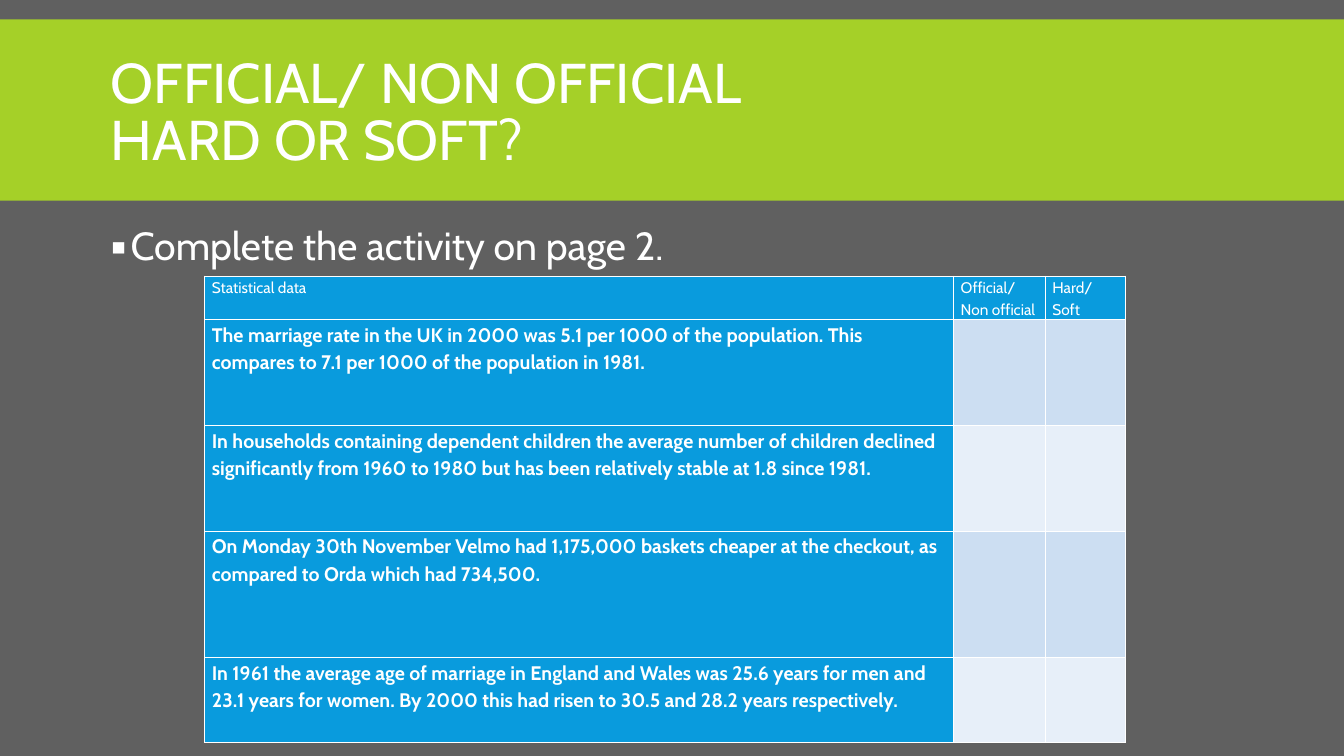
from lxml.etree import SubElement as Sub
from pptx import Presentation
from pptx.dml.color import RGBColor as Rgb
from pptx.enum.shapes import MSO_SHAPE as Shape
from pptx.enum.text import MSO_ANCHOR as Anchor, MSO_AUTO_SIZE as Auto, PP_ALIGN as Align
from pptx.oxml.ns import qn
from pptx.util import Cm, Pt

HUES = {"back": "606060", "band": "A5D028", "text": "FFFFFF", "blue": "099BDD",
        "odd": "CCDEF2", "even": "E7EFF9"}
FACE = "Cabin"
HEADS = ["Statistical data", "Official/ Non official", "Hard/Soft"]
FACTS = [
    "The marriage rate in the UK in 2000 was 5.1 per 1000 of the population. This compares to 7.1 per 1000 of the population in 1981.",
    "In households containing dependent children the average number of children declined significantly from 1960 to 1980 but has been relatively stable at 1.8 since 1981.",
    "On Monday 30th November Velmo had 1,175,000 baskets cheaper at the checkout, as compared to Orda which had 734,500.",
    "In 1961 the average age of marriage in England and Wales was 25.6 years for men and 23.1 years for women. By 2000 this had risen to 30.5 and 28.2 years respectively.",
]
ROWS = [1.07, 2.67, 2.67, 3.18, 2.13]


def put(item, **look):
    for name, value in look.items():
        setattr(item, name, value)


def paint(fill, hue):
    fill.solid()
    fill.fore_color.rgb = Rgb.from_string(HUES[hue])


def place(item, box):
    put(item, **dict(zip(("left", "top", "width", "height"), map(Cm, box))))


def write(frame, text, size, bold=False, **look):
    frame.text = text
    para = frame.paragraphs[0]
    put(para, alignment=Align.LEFT, **look)
    for run in para.runs:
        put(run.font, name=FACE, size=Pt(size), bold=bold)
        run.font.color.rgb = Rgb.from_string(HUES["text"])
    return para


def add_band(slide, box):
    band = slide.shapes.add_shape(Shape.RECTANGLE, *map(Cm, box))
    paint(band.fill, "band")
    band.line.fill.background()
    band.shadow.inherit = False
    slide.shapes._spTree.insert(2, band._element)


def add_head(slide, box):
    x, y, wide, high = box
    add_band(slide, box)
    title = slide.shapes.title
    place(title, (x + 2.54, y + 0.3, wide - 5.08, high - 0.38))
    frame = title.text_frame
    put(frame, word_wrap=True, auto_size=Auto.NONE, vertical_anchor=Anchor.MIDDLE)
    write(frame, "OFFICIAL/ NON OFFICIAL\vHARD OR SOFT?", 40, line_spacing=0.85)


def add_task(slide, box):
    body = slide.placeholders[1]
    place(body, box)
    frame = body.text_frame
    put(frame, word_wrap=True, auto_size=Auto.NONE, vertical_anchor=Anchor.TOP)
    para = write(frame, "Complete the activity on page 2.", 28, line_spacing=0.9,
                 space_before=Pt(12), space_after=Pt(2))
    props = para._p.get_or_add_pPr()
    props.set("marL", str(Cm(0.5)))
    props.set("indent", str(Cm(-0.5)))
    tint = Sub(props, qn("a:buClr"))
    Sub(tint, qn("a:srgbClr"), val=HUES["text"])
    Sub(props, qn("a:buFont"), typeface=FACE)
    Sub(props, qn("a:buChar"), char="▪")


def edge(cell):
    props = cell._tc.get_or_add_tcPr()
    for side in ("lnL", "lnR", "lnT", "lnB"):
        line = Sub(props, qn("a:" + side), w=str(Pt(1)))
        fill = Sub(line, qn("a:solidFill"))
        Sub(fill, qn("a:srgbClr"), val=HUES["text"])


def add_grid(slide, box):
    wide = box[2]
    cols = [wide - 4.34, 2.31, 2.03]
    grid = slide.shapes.add_table(len(ROWS), len(cols), *map(Cm, box)).table
    for col, size in zip(grid.columns, cols):
        col.width = Cm(size)
    cells = [HEADS] + [[fact, "", ""] for fact in FACTS]
    for r, (texts, high) in enumerate(zip(cells, ROWS)):
        grid.rows[r].height = Cm(high)
        for c, text in enumerate(texts):
            cell = grid.cell(r, c)
            edge(cell)
            paint(cell.fill, "blue" if text else "odd" if r % 2 else "even")
            put(cell, margin_left=Cm(0.18), margin_right=Cm(0.18), margin_top=0, margin_bottom=0)
            if text:
                write(cell.text_frame, text, 14 if r else 11, bold=r > 0, line_spacing=1.15)


def main():
    deck = Presentation()
    put(deck, slide_width=Cm(33.87), slide_height=Cm(19.05))
    slide = deck.slides.add_slide(deck.slide_layouts[1])
    paint(slide.background.fill, "back")
    add_head(slide, (0, 0.49, 33.87, 4.57))
    add_task(slide, (2.54, 5.59, 28.78, 11.68))
    add_grid(slide, (5.16, 6.96, 23.21, sum(ROWS)))
    deck.save("out.pptx")


if __name__ == "__main__":
    main()
